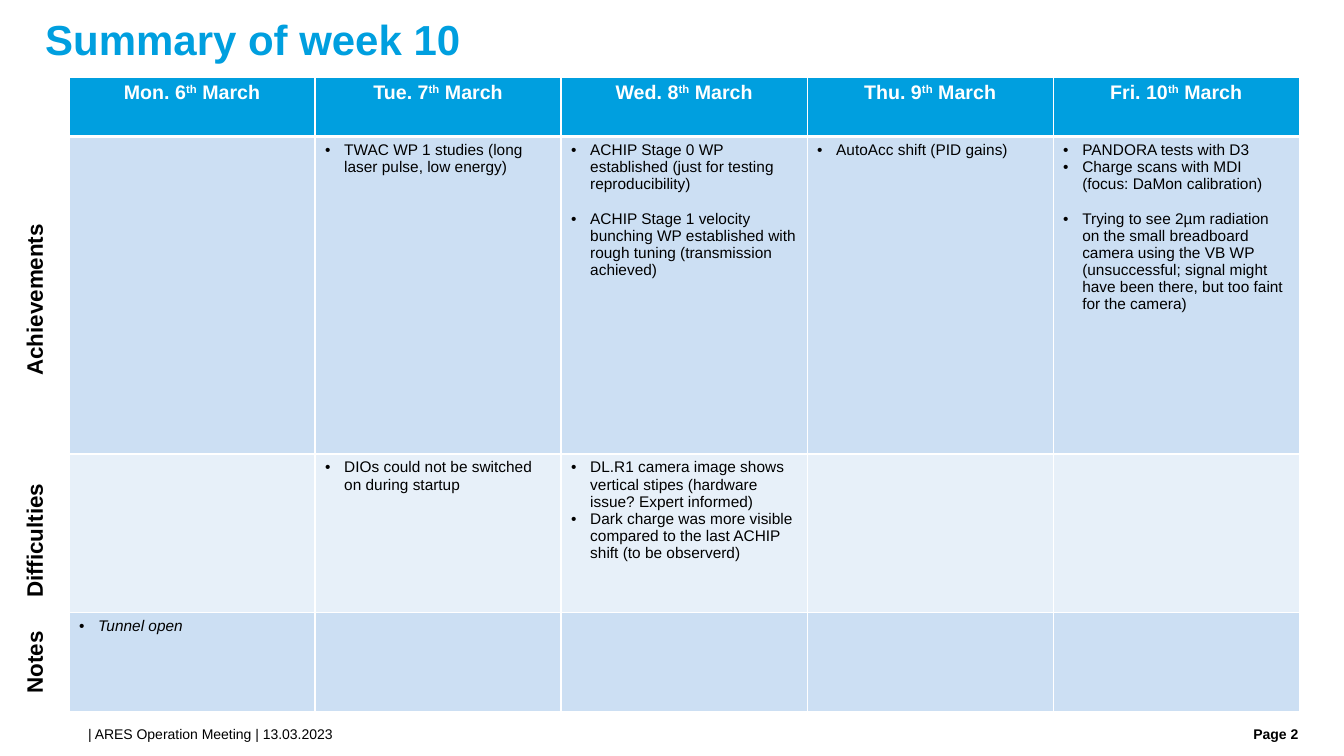
from typing import NamedTuple

from lxml import etree
from pptx import Presentation
from pptx import util as u
from pptx.dml import color
from pptx.enum import text
from pptx.oxml import ns

BLUE, BLACK, WHITE = "009FDF", "000000", "FFFFFF"
DARK_BAND, LIGHT_BAND = "CCDFF3", "E7F0F9"
COLUMN_WIDTH = 6.2
LABEL_CENTRE, LABEL_HEIGHT = 0.86, 0.94


class Entry(NamedTuple):
    wording: str
    gap: float = 0
    italic: bool = False


class Category(NamedTuple):
    label: str
    label_middle: float
    label_width: float
    height: float
    band: str
    entries: dict[int, list[Entry]]


class Caption(NamedTuple):
    wording: str
    left: float
    width: float
    alignment: text.PP_ALIGN
    bold: bool


DAYS = [("Mon", 6), ("Tue", 7), ("Wed", 8), ("Thu", 9), ("Fri", 10)]

CATEGORIES = [
    Category("Achievements", 7.53, 4.37, 8, DARK_BAND, {
        1: [Entry("TWAC WP 1 studies (long laser pulse, low energy)")],
        2: [Entry("ACHIP Stage 0 WP established (just for testing reproducibility)"),
            Entry("ACHIP Stage 1 velocity bunching WP established with rough tuning "
                  "(transmission achieved)", gap=12.4)],
        3: [Entry("AutoAcc shift (PID gains)")],
        4: [Entry("PANDORA tests with D3"),
            Entry("Charge scans with MDI (focus: DaMon calibration)"),
            Entry("Trying to see 2µm radiation on the small breadboard camera using the "
                  "VB WP (unsuccessful; signal might have been there, but too faint for "
                  "the camera)", gap=12.4)],
    }),
    Category("Difficulties", 13.6, 3.43, 4, LIGHT_BAND, {
        1: [Entry("DIOs could not be switched on during startup")],
        2: [Entry("DL.R1 camera image shows vertical stipes (hardware issue? Expert informed)"),
            Entry("Dark charge was more visible compared to the last ACHIP shift "
                  "(to be observerd)")],
    }),
    Category("Notes", 16.68, 2.08, 2.5, DARK_BAND, {0: [Entry("Tunnel open", italic=True)]}),
]

CAPTIONS = [
    Caption("| ARES Operation Meeting | 13.03.2023", 2.22, 27.64, text.PP_ALIGN.LEFT, False),
    Caption("Page 2", 30.12, 2.6, text.PP_ALIGN.RIGHT, True),
]


def rgb(value: str) -> color.RGBColor:
    return color.RGBColor.from_string(value)


def assign(target, values: dict) -> None:
    for name, value in values.items():
        setattr(target, name, value)


def write(paragraph, wording: str, size: float, ink: str = BLACK,
          bold: bool = False, italic: bool = False):
    run = paragraph.add_run()
    run.text = wording
    assign(run.font, {"name": "Arial", "size": u.Pt(size), "bold": bold, "italic": italic})
    run.font.color.rgb = rgb(ink)
    return run


def remove_margins(frame) -> None:
    assign(frame, {"margin_left": 0, "margin_top": 0, "margin_right": 0, "margin_bottom": 0,
                   "word_wrap": True, "auto_size": text.MSO_AUTO_SIZE.NONE,
                   "vertical_anchor": text.MSO_ANCHOR.TOP})


def add_bullet(paragraph) -> None:
    properties = paragraph._p.get_or_add_pPr()
    properties.set("marL", str(u.Cm(0.48)))
    properties.set("indent", str(-u.Cm(0.48)))
    etree.SubElement(properties, ns.qn("a:buFont")).set("typeface", "Arial")
    etree.SubElement(properties, ns.qn("a:buChar")).set("char", "•")


def format_cell(cell, fill: str, top: float = 1, bottom: float = 1) -> None:
    properties = cell._tc.get_or_add_tcPr()
    for side, width in {"L": 1, "R": 1, "T": top, "B": bottom}.items():
        line = etree.SubElement(properties, ns.qn(f"a:ln{side}"), w=str(u.Pt(width)))
        solid = etree.SubElement(line, ns.qn("a:solidFill"))
        etree.SubElement(solid, ns.qn("a:srgbClr")).set("val", WHITE)
    cell.fill.solid()
    cell.fill.fore_color.rgb = rgb(fill)


def write_day(cell, weekday: str, date: int) -> None:
    format_cell(cell, BLUE, bottom=3)
    heading = cell.text_frame.paragraphs[0]
    heading.alignment = text.PP_ALIGN.CENTER
    for wording in (f"{weekday}. {date}", "th", " March"):
        run = write(heading, wording, 14, WHITE, bold=True)
        if wording == "th":
            run._r.get_or_add_rPr().set("baseline", "30000")


def write_entries(cell, entries: list[Entry]) -> None:
    frame = cell.text_frame
    for index, entry in enumerate(entries):
        paragraph = frame.add_paragraph() if index else frame.paragraphs[0]
        add_bullet(paragraph)
        if entry.gap:
            paragraph.space_before = u.Pt(entry.gap)
        write(paragraph, entry.wording, 11, italic=entry.italic)


def add_week(slide) -> None:
    heights = [1.5] + [category.height for category in CATEGORIES]
    week = slide.shapes.add_table(
        len(heights), len(DAYS), u.Cm(1.74), u.Cm(1.94),
        u.Cm(COLUMN_WIDTH * len(DAYS)), u.Cm(sum(heights))).table
    for row, height in zip(week.rows, heights):
        row.height = u.Cm(height)
    for day, (weekday, date) in enumerate(DAYS):
        week.columns[day].width = u.Cm(COLUMN_WIDTH)
        write_day(week.cell(0, day), weekday, date)
        for row, category in enumerate(CATEGORIES, 1):
            cell = week.cell(row, day)
            format_cell(cell, category.band, top=3 if row == 1 else 1)
            write_entries(cell, category.entries.get(day, []))


def add_label(slide, category: Category) -> None:
    label = slide.shapes.add_textbox(
        u.Cm(LABEL_CENTRE - category.label_width / 2),
        u.Cm(category.label_middle - LABEL_HEIGHT / 2),
        u.Cm(category.label_width), u.Cm(LABEL_HEIGHT))
    label.rotation = 270
    assign(label.text_frame, {"word_wrap": False,
                              "auto_size": text.MSO_AUTO_SIZE.SHAPE_TO_FIT_TEXT})
    write(label.text_frame.paragraphs[0], category.label, 16, bold=True)


def add_caption(slide, caption: Caption) -> None:
    frame = slide.shapes.add_textbox(
        u.Cm(caption.left), u.Cm(18.29), u.Cm(caption.width), u.Cm(0.5)).text_frame
    remove_margins(frame)
    frame.paragraphs[0].alignment = caption.alignment
    write(frame.paragraphs[0], caption.wording, 10, bold=caption.bold)


def add_title(slide) -> None:
    title = slide.shapes.title
    assign(title, {"left": u.Cm(1.14), "top": u.Cm(0.48),
                   "width": u.Cm(31.6), "height": u.Cm(1.24)})
    remove_margins(title.text_frame)
    heading = title.text_frame.paragraphs[0]
    assign(heading, {"alignment": text.PP_ALIGN.LEFT, "line_spacing": 0.9})
    write(heading, "Summary of week 10", 30, BLUE, bold=True)


def main() -> None:
    deck = Presentation()
    assign(deck, {"slide_width": u.Cm(33.87), "slide_height": u.Cm(19.05)})
    slide = deck.slides.add_slide(deck.slide_layouts[5])
    add_title(slide)
    for caption in CAPTIONS:
        add_caption(slide, caption)
    add_week(slide)
    for category in CATEGORIES:
        add_label(slide, category)
    deck.save("out.pptx")


if __name__ == "__main__":
    main()
